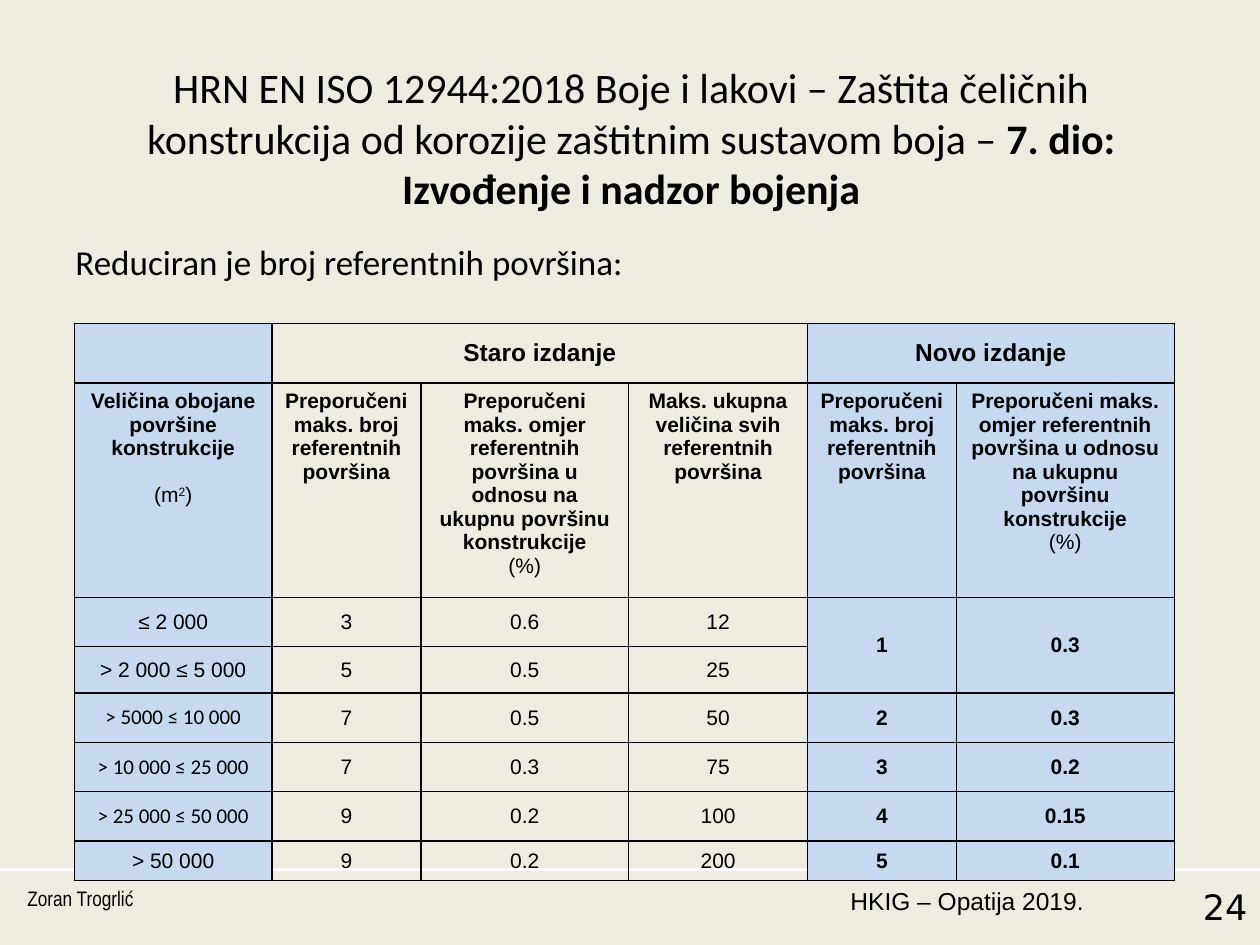
from dataclasses import dataclass

from lxml.etree import SubElement
from pptx import Presentation
from pptx.dml.color import RGBColor
from pptx.enum.shapes import MSO_CONNECTOR
from pptx.enum.text import MSO_ANCHOR, MSO_AUTO_SIZE, PP_ALIGN
from pptx.oxml import parse_xml
from pptx.oxml.ns import nsdecls, qn
from pptx.util import Pt

COLORS = {
    "background": "EEECE1",
    "new": "C6D9F1",
    "text": "000000",
    "border": "000000",
    "rule": "FFFFFF",
}


@dataclass
class Label:
    text: str
    left: float
    top: float
    width: float
    height: float
    size: float
    font: str
    align: PP_ALIGN = PP_ALIGN.LEFT


@dataclass
class Span:
    row: int
    col: int
    last_row: int
    last_col: int


LABELS = [
    Label("Reduciran je broj referentnih površina:", 36, 134, 648, 348.5, 20, "Calibri"),
    Label("HKIG – Opatija 2019.", 473, 502.5, 153.5, 37.5, 14, "Arial", PP_ALIGN.RIGHT),
    Label("Zoran Trogrlić", 8.5, 502.5, 156.5, 37.5, 12, "Arial Narrow"),
    Label("24", 632, 502.5, 88, 37.5, 20, "DejaVu Sans", PP_ALIGN.RIGHT),
]

COLUMNS = [113, 85, 118.8, 102.2, 85, 124.6]
ROWS = [34, 89, 28, 26.7, 28.2, 28.2, 28.2, 22.5]
SPANS = [Span(0, 1, 0, 3), Span(0, 4, 0, 5), Span(2, 4, 3, 4), Span(2, 5, 3, 5)]
NEW_COLUMNS = (0, 4, 5)
BOLD_COLUMNS = (4, 5)
CALIBRI_ROWS = (4, 5, 6)

MAX_COUNT = "Preporučeni maks. broj referentnih površina"
MAX_RATIO = (
    "Preporučeni maks. omjer referentnih površina u odnosu "
    "na ukupnu površinu konstrukcije\n(%)"
)
CELLS = [
    ["", "Staro izdanje", "", "", "Novo izdanje", ""],
    ["Veličina obojane površine konstrukcije\n(m", MAX_COUNT, MAX_RATIO,
     "Maks. ukupna veličina svih referentnih površina", MAX_COUNT, MAX_RATIO],
    ["≤ 2 000", "3", "0.6", "12", "1", "0.3"],
    ["> 2 000 ≤ 5 000", "5", "0.5", "25", "", ""],
    ["> 5000 ≤ 10 000", "7", "0.5", "50", "2", "0.3"],
    ["> 10 000 ≤ 25 000", "7", "0.3", "75", "3", "0.2"],
    ["> 25 000 ≤ 50 000", "9", "0.2", "100", "4", "0.15"],
    ["> 50 000", "9", "0.2", "200", "5", "0.1"],
]


def rgb(name: str) -> RGBColor:
    return RGBColor.from_string(COLORS[name])


def format_run(r, size: float, font: str, bold: bool = False) -> None:
    r.font.size = Pt(size)
    r.font.name = font
    r.font.bold = bold
    r.font.color.rgb = rgb("text")


def add_label(s, label: Label) -> None:
    sp = s.shapes.add_textbox(
        Pt(label.left), Pt(label.top), Pt(label.width), Pt(label.height)
    )
    tf = sp.text_frame
    tf.word_wrap = True
    tf.text = label.text
    p = tf.paragraphs[0]
    p.alignment = label.align
    format_run(p.runs[0], label.size, label.font)


def add_title(s) -> None:
    sp = s.shapes.title
    sp.left, sp.top, sp.width, sp.height = Pt(36.7), Pt(31.7), Pt(648), Pt(90)
    tf = sp.text_frame
    tf.word_wrap = True
    tf.auto_size = MSO_AUTO_SIZE.NONE
    tf.vertical_anchor = MSO_ANCHOR.TOP
    p = tf.paragraphs[0]
    p.text = (
        "HRN EN ISO 12944:2018 Boje i lakovi – Zaštita čeličnih "
        "konstrukcija od korozije zaštitnim sustavom boja – "
    )
    p.alignment = PP_ALIGN.CENTER
    format_run(p.runs[0], 24, "Calibri")
    r = p.add_run()
    r.text = "7. dio: Izvođenje i nadzor bojenja"
    format_run(r, 24, "Calibri", True)


def add_rule(s, top: float) -> None:
    line = s.shapes.add_connector(MSO_CONNECTOR.STRAIGHT, 0, Pt(top), Pt(720), Pt(top))
    line.line.color.rgb = rgb("rule")
    line.line.width = Pt(1.5)
    SubElement(line._element.spPr, qn("a:effectLst"))


def add_borders(cell) -> None:
    """Put the four border lines ahead of the fill, as the schema demands."""
    tc_pr = cell._tc.get_or_add_tcPr()
    for i, side in enumerate(("lnL", "lnR", "lnT", "lnB")):
        tc_pr.insert(i, parse_xml(
            f'<a:{side} {nsdecls("a")} w="{Pt(1)}"><a:solidFill>'
            f'<a:srgbClr val="{COLORS["border"]}"/></a:solidFill></a:{side}>'
        ))


def fill_cell(cell, row: int, col: int) -> None:
    if col in NEW_COLUMNS:
        cell.fill.solid()
        cell.fill.fore_color.rgb = rgb("new")
    else:
        cell.fill.background()
    add_borders(cell)
    cell.vertical_anchor = MSO_ANCHOR.TOP if row == 1 else MSO_ANCHOR.MIDDLE
    if not CELLS[row][col]:
        return
    cell.text_frame.text = CELLS[row][col]
    size = 14 if row == 0 else 12
    font = "Calibri" if col == 0 and row in CALIBRI_ROWS else "Arial"
    bold = row < 2 or col in BOLD_COLUMNS
    for i, p in enumerate(cell.text_frame.paragraphs):
        p.alignment = PP_ALIGN.CENTER
        format_run(p.runs[0], size, font, bold and i == 0)


def finish_square_metres(p) -> None:
    p.space_before = Pt(13.5)
    for text, baseline in (("2", "30000"), (")", "0")):
        r = p.add_run()
        r.text = text
        format_run(r, 12, "Arial")
        r._r.get_or_add_rPr().set("baseline", baseline)


def add_areas_table(s) -> None:
    table = s.shapes.add_table(
        len(ROWS), len(COLUMNS), Pt(42.5), Pt(185), Pt(sum(COLUMNS)), Pt(sum(ROWS))
    ).table
    table.first_row = table.horz_banding = False
    for column, width in zip(table.columns, COLUMNS):
        column.width = Pt(width)
    for row, height in zip(table.rows, ROWS):
        row.height = Pt(height)
    for span in SPANS:
        table.cell(span.row, span.col).merge(table.cell(span.last_row, span.last_col))
    for row in range(len(ROWS)):
        for col in range(len(COLUMNS)):
            fill_cell(table.cell(row, col), row, col)
    finish_square_metres(table.cell(1, 0).text_frame.paragraphs[1])


def main() -> None:
    prs = Presentation()
    prs.slide_width, prs.slide_height = Pt(720), Pt(540)
    s = prs.slides.add_slide(prs.slide_layouts[5])
    s.background.fill.solid()
    s.background.fill.fore_color.rgb = rgb("background")
    add_rule(s, 497)
    add_title(s)
    for label in LABELS:
        add_label(s, label)
    add_areas_table(s)
    prs.save("out.pptx")


if __name__ == "__main__":
    main()
